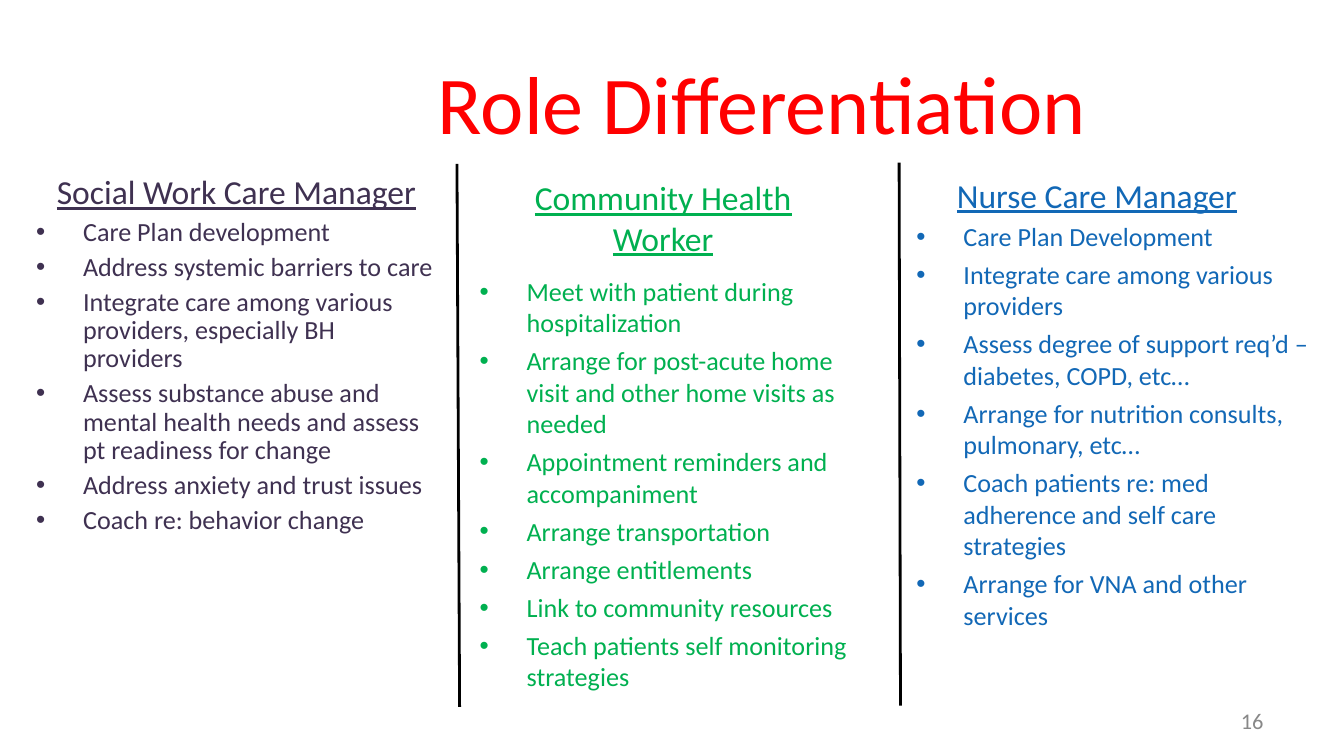
from dataclasses import dataclass

from lxml.etree import SubElement
from pptx import Presentation
from pptx.dml.color import RGBColor
from pptx.enum.shapes import MSO_CONNECTOR as Connector
from pptx.enum.text import MSO_ANCHOR as Anchor, PP_ALIGN as Align
from pptx.oxml.ns import qn
from pptx.util import Inches, Pt


@dataclass(frozen=True)
class Theme:
    font: str = "Calibri"
    title_color: str = "FF0000"
    number_color: str = "888888"
    divider_color: str = "000000"
    social: str = "3F3151"
    community: str = "00B050"
    nurse: str = "1268B6"
    title_size: float = 44
    heading_size: float = 18
    body_size: float = 14
    number_size: float = 12
    bullet_gap: float = 3.6
    divider_width: float = 1.5


THEME = Theme()
TITLE = "Role Differentiation"
PAGE_NUMBER = "16"
ROLES = [
    {
        "heading": "Social Work Care Manager",
        "color": THEME.social,
        "body_at": (0.14, 1.26, 3.24, 3.64),
        "line_spacing": 0.9,
        "duties": [
            "Care Plan development",
            "Address systemic barriers to care",
            "Integrate care among various providers, especially BH providers",
            "Assess substance abuse and mental health needs and assess pt readiness for change",
            "Address anxiety and trust issues",
            "Coach re: behavior change",
        ],
    },
    {
        "heading": "Community Health Worker",
        "color": THEME.community,
        "heading_at": (3.55, 1.27, 2.77, 0.71),
        "heading_align": Align.CENTER,
        "body_at": (3.44, 2, 3.1, 3.64),
        "duties": [
            "Meet with patient during hospitalization",
            "Arrange for post-acute home visit and other home visits as needed",
            "Appointment reminders and accompaniment",
            "Arrange transportation",
            "Arrange entitlements",
            "Link to community resources",
            "Teach patients self monitoring strategies",
        ],
    },
    {
        "heading": "Nurse Care Manager",
        "color": THEME.nurse,
        "heading_at": (7.07, 1.25, 2.73, 0.4),
        "heading_align": Align.LEFT,
        "body_at": (6.69, 1.59, 3.15, 3.64),
        "duties": [
            "Care Plan Development",
            "Integrate care among various providers",
            "Assess degree of support req’d – diabetes, COPD, etc…",
            "Arrange for nutrition consults, pulmonary, etc…",
            "Coach patients re: med adherence and self care strategies",
            "Arrange for VNA and other services",
        ],
    },
]
DIVIDERS = [(3.4, 1.22, 3.42, 5.26), (6.69, 1.21, 6.7, 5.25)]


def add_box(page, at, side_inset=0.1, anchor=Anchor.TOP):
    frame = page.shapes.add_textbox(*map(Inches, at)).text_frame
    frame.word_wrap = True
    frame.vertical_anchor = anchor
    frame.margin_left = frame.margin_right = Inches(side_inset)
    return frame


def write(para, text, size, color, align=Align.LEFT, underline=False):
    para.alignment = align
    span = para.add_run()
    span.text = text
    span.font.name = THEME.font
    span.font.size = Pt(size)
    span.font.color.rgb = RGBColor.from_string(color)
    span.font.underline = underline


def add_bullet(para, color):
    props = para._p.get_or_add_pPr()
    props.set("marL", str(Inches(0.38)))
    props.set("indent", str(Inches(-0.35)))
    bullet_color = SubElement(props, qn("a:buClr"))
    SubElement(bullet_color, qn("a:srgbClr"), val=color)
    SubElement(props, qn("a:buFont"), typeface="Arial")
    SubElement(props, qn("a:buChar"), char="•")


def add_role(page, role):
    color = role["color"]
    body = add_box(page, role["body_at"])
    paras = [body.paragraphs[0]]
    heading_para = paras[0]
    if "heading_at" in role:
        heading_para = add_box(page, role["heading_at"], 0.05).paragraphs[0]
    else:
        paras.append(body.add_paragraph())
    write(heading_para, role["heading"], THEME.heading_size, color,
          role.get("heading_align", Align.CENTER), underline=True)
    for index, duty in enumerate(role["duties"]):
        para = paras[-1] if index == 0 else body.add_paragraph()
        add_bullet(para, color)
        write(para, duty, THEME.body_size, color)
    for index, para in enumerate(body.paragraphs):
        if index:
            para.space_before = Pt(THEME.bullet_gap)
        para.line_spacing = role.get("line_spacing", 1.0)


def add_divider(page, ends):
    line = page.shapes.add_connector(Connector.STRAIGHT, *map(Inches, ends))
    line.line.color.rgb = RGBColor.from_string(THEME.divider_color)
    line.line.width = Pt(THEME.divider_width)
    SubElement(line._element.spPr, qn("a:effectLst"))


def main():
    deck = Presentation()
    deck.slide_width = Inches(10)
    deck.slide_height = deck.slide_width * 9 // 16
    page = deck.slides.add_slide(deck.slide_layouts[6])

    title = add_box(page, (0.9, 0.38, 8.99, 0.75), anchor=Anchor.MIDDLE)
    title.margin_left = Inches(0.65)
    write(title.paragraphs[0], TITLE, THEME.title_size, THEME.title_color, Align.CENTER)

    number = add_box(page, (7.17, 5.21, 2.33, 0.3), anchor=Anchor.MIDDLE)
    write(number.paragraphs[0], PAGE_NUMBER, THEME.number_size, THEME.number_color, Align.RIGHT)

    for role in ROLES:
        add_role(page, role)
    for ends in DIVIDERS:
        add_divider(page, ends)
    deck.save("out.pptx")


if __name__ == "__main__":
    main()
